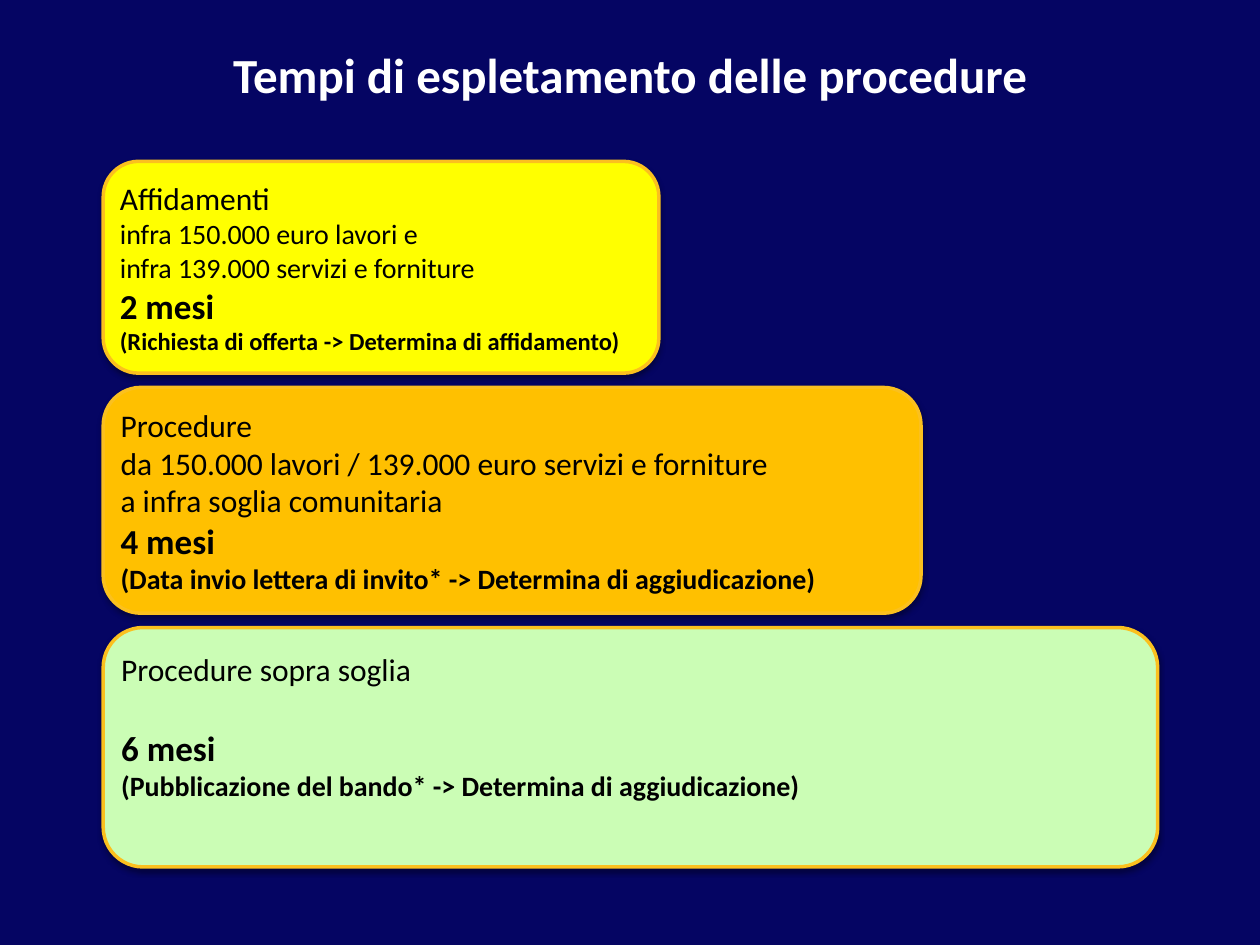
"""Build a slide on the time limits of procurement procedures."""
from lxml import etree
from pptx import Presentation
from pptx import util as u
from pptx.dml.color import RGBColor
from pptx.enum import shapes, text
from pptx.oxml import ns

NAVY = RGBColor(0x05, 0x05, 0x63)
WHITE = RGBColor(0xFF, 0xFF, 0xFF)
BLACK = RGBColor(0, 0, 0)
GOLD = RGBColor(0xFB, 0xC0, 0x1E)
YELLOW = RGBColor(0xFF, 0xFF, 0)
ORANGE = RGBColor(0xFF, 0xC0, 0)
GREEN = RGBColor(0xCB, 0xFD, 0xB5)

LEFT, TOP, GAP = 59, 92.2, 8.2
LEFT_AL, JUSTIFY = text.PP_ALIGN.LEFT, text.PP_ALIGN.JUSTIFY

BOXES = [
    (317.5, 121, YELLOW, JUSTIFY, 3.6, [
        ("Affidamenti", 18, False, 0),
        ("infra 150.000 euro lavori e", 16, False, 0),
        ("infra 139.000 servizi e forniture", 16, False, 0),
        ("2 mesi", 20, True, 0),
        ("(Richiesta di offerta -> Determina di affidamento)", 14, True, 0)]),
    (467.3, 129, ORANGE, LEFT_AL, 3.6, [
        ("Procedure", 18, False, 0),
        ("da 150.000 lavori / 139.000 euro servizi e forniture", 18, False, 0),
        ("a infra soglia comunitaria", 18, False, 0),
        ("4 mesi", 20, True, 0),
        ("(Data invio lettera di invito* -> Determina di aggiudicazione)", 16, True, 0)]),
    (602.6, 136.8, GREEN, LEFT_AL, 28, [
        ("Procedure sopra soglia", 18, False, 0),
        ("6 mesi", 20, True, 22),
        ("(Pubblicazione del bando* -> Determina di aggiudicazione)", 16, True, 0)]),
]


class Deck:
    font = "Calibri"

    def __init__(self, prs):
        self.s = prs.slides.add_slide(prs.slide_layouts[6])
        fill = self.s.background.fill
        fill.solid()
        fill.fore_color.rgb = NAVY

    def add_lines(self, tf, lines, color, align):
        tf.word_wrap = True
        tf.vertical_anchor = text.MSO_ANCHOR.MIDDLE
        for i, (words, size, bold, before) in enumerate(lines):
            p = tf.add_paragraph() if i else tf.paragraphs[0]
            p.alignment = align
            p.space_before = u.Pt(before)
            r = p.add_run()
            r.text = words
            r.font.name, r.font.size, r.font.bold = self.font, u.Pt(size), bold
            r.font.color.rgb = color

    def title(self, words, x, y, w, h):
        sp = self.s.shapes.add_textbox(u.Pt(x), u.Pt(y), u.Pt(w), u.Pt(h))
        self.add_lines(sp.text_frame, [(words, 28, True, 0)], WHITE, text.PP_ALIGN.CENTER)

    def shadow(self, sp):
        sp.shadow.inherit = False
        effects = sp.element.spPr.find(ns.qn("a:effectLst"))
        outer = etree.SubElement(effects, ns.qn("a:outerShdw"), blurRad=str(u.Pt(3)),
                                 dist=str(u.Pt(1.8)), dir="5400000", rotWithShape="0")
        color = etree.SubElement(outer, ns.qn("a:srgbClr"), val="000000")
        etree.SubElement(color, ns.qn("a:alpha"), val="35000")

    def box(self, x, y, w, h, fill, align, bottom, lines):
        sp = self.s.shapes.add_shape(shapes.MSO_SHAPE.ROUNDED_RECTANGLE,
                                     u.Pt(x), u.Pt(y), u.Pt(w), u.Pt(h))
        sp.fill.solid()
        sp.fill.fore_color.rgb = fill
        sp.line.color.rgb = GOLD
        sp.line.width = u.Pt(2)
        self.shadow(sp)
        tf = sp.text_frame
        tf.margin_left = tf.margin_right = tf.margin_top = u.Pt(3.6)
        tf.margin_bottom = u.Pt(bottom)
        self.add_lines(tf, lines, BLACK, align)


def main():
    prs = Presentation()
    prs.slide_width, prs.slide_height = u.Pt(720), u.Pt(540)
    deck = Deck(prs)
    deck.title("Tempi di espletamento delle procedure", 36, 21.6, 648, 41)
    y = TOP
    for w, h, fill, align, bottom, lines in BOXES:
        deck.box(LEFT, y, w, h, fill, align, bottom, lines)
        y += h + GAP
    prs.save("out.pptx")


if __name__ == "__main__":
    main()
